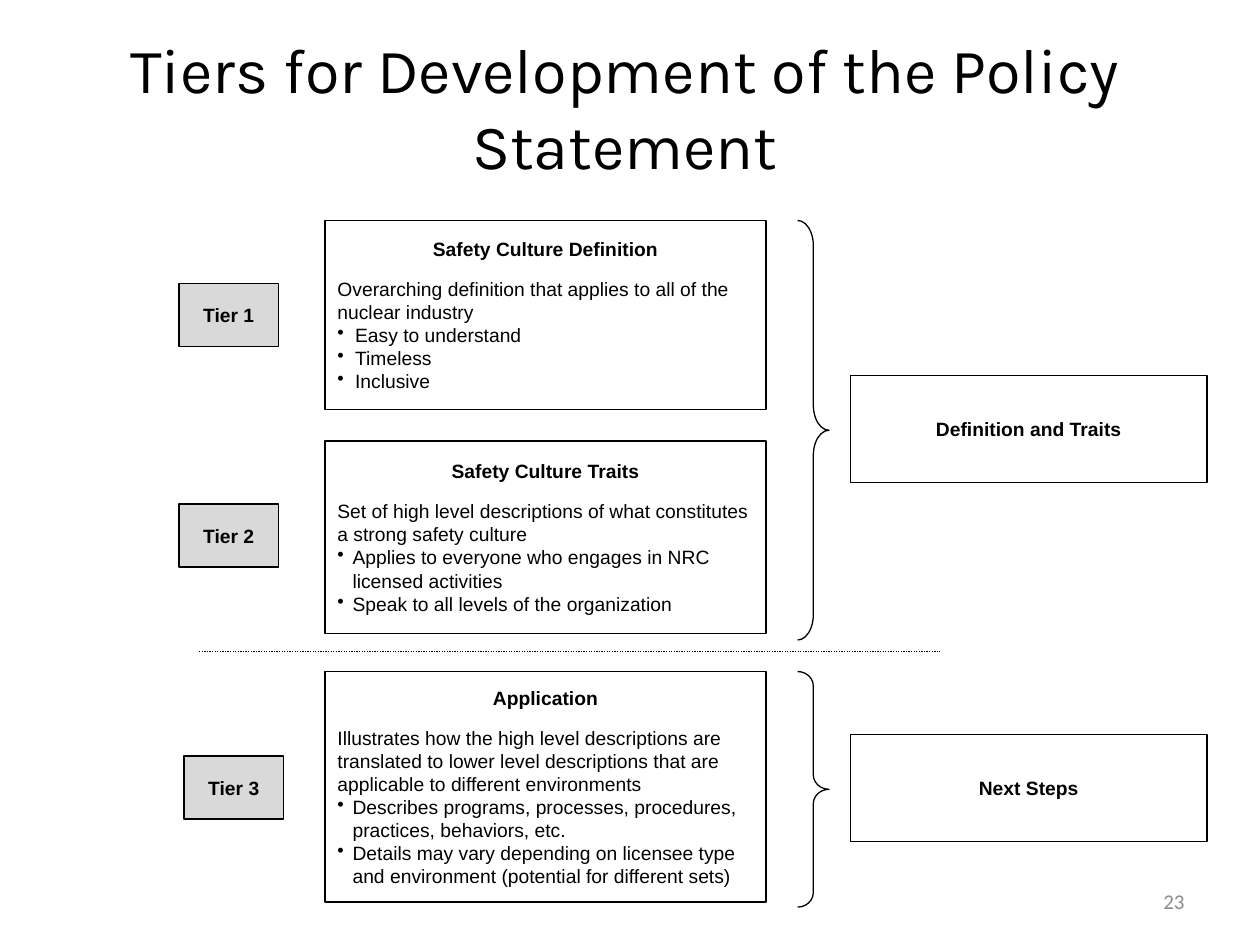
from dataclasses import dataclass
from typing import Optional

from lxml import etree
from pptx import Presentation
from pptx.dml.color import RGBColor
from pptx.enum import dml, shapes, text
from pptx.oxml import ns
from pptx.util import Inches, Pt

HUES = {"ink": "000000", "card": "FFFFFF", "tier": "D9D9D9", "page": "8C8C8C"}
LEFT, MID, RIGHT = text.PP_ALIGN.LEFT, text.PP_ALIGN.CENTER, text.PP_ALIGN.RIGHT


@dataclass
class Box:
    x: float
    y: float
    w: float
    h: float


@dataclass
class Font:
    name: str = "Arial"
    size: float = 11
    hue: str = "ink"
    bold: bool = False


@dataclass
class Card:
    top: float
    high: float
    head: str
    body: str
    points: list[str]
    indent: float = 0.12


@dataclass
class Tag:
    box: Box
    label: str
    fill: str


@dataclass
class Brace:
    top: float
    high: float
    bend: float


BOLD = Font(bold=True)
CARDS = [
    Card(1.75, 1.5, "Safety Culture Definition",
         "Overarching definition that applies to all of the nuclear industry",
         ["Easy to understand", "Timeless", "Inclusive"], 0.14),
    Card(3.5, 1.53, "Safety Culture Traits",
         "Set of high level descriptions of what constitutes a strong safety culture",
         ["Applies to everyone who engages in NRC licensed activities",
          "Speak to all levels of the organization"]),
    Card(5.33, 1.83, "Application",
         "Illustrates how the high level descriptions are translated to lower level "
         "descriptions that are applicable to different environments",
         ["Describes programs, processes, procedures, practices, behaviors, etc.",
          "Details may vary depending on licensee type and environment "
          "(potential for different sets)"]),
]
TAGS = [
    Tag(Box(1.42, 2.25, 0.79, 0.5), "Tier 1", "tier"),
    Tag(Box(1.42, 4, 0.79, 0.5), "Tier 2", "tier"),
    Tag(Box(1.46, 6, 0.79, 0.5), "Tier 3", "tier"),
    Tag(Box(6.75, 2.98, 2.83, 0.85), "Definition and Traits", "card"),
    Tag(Box(6.75, 5.83, 2.83, 0.85), "Next Steps", "card"),
]
BRACES = [Brace(1.75, 3.33, 0.8), Brace(5.33, 1.87, 0.46)]


def tint(hue: str) -> RGBColor:
    return RGBColor.from_string(HUES[hue])


def place(box: Box) -> list[int]:
    return [Inches(n) for n in (box.x, box.y, box.w, box.h)]


def write(para, words: str, font: Font, align=LEFT) -> None:
    para.alignment = align
    run = para.add_run()
    run.text = words
    run.font.name = font.name
    run.font.size = Pt(font.size)
    run.font.bold = font.bold
    run.font.color.rgb = tint(font.hue)


def bullet(para, indent: float) -> None:
    props = para._p.get_or_add_pPr()
    props.set("marL", str(Inches(indent)))
    props.set("indent", str(-Inches(indent)))
    etree.SubElement(props, ns.qn("a:buChar")).set("char", "•")


def shape(slide, kind, box: Box, fill: Optional[str] = None):
    item = slide.shapes.add_shape(kind, *place(box))
    item.shadow.inherit = False
    item.line.color.rgb = tint("ink")
    item.line.width = Pt(0.75)
    if fill:
        item.fill.solid()
        item.fill.fore_color.rgb = tint(fill)
    else:
        item.fill.background()
    item.text_frame.word_wrap = True
    item.text_frame.vertical_anchor = text.MSO_ANCHOR.MIDDLE
    return item


def label(slide, box: Box, words: str, font: Font, align) -> None:
    frame = slide.shapes.add_textbox(*place(box)).text_frame
    frame.word_wrap = True
    frame.vertical_anchor = text.MSO_ANCHOR.MIDDLE
    write(frame.paragraphs[0], words, font, align)


def card(slide, data: Card) -> None:
    box = Box(2.58, data.top, 3.5, data.high)
    frame = shape(slide, shapes.MSO_SHAPE.RECTANGLE, box, "card").text_frame
    head = frame.paragraphs[0]
    write(head, data.head, BOLD, MID)
    head.space_after = Pt(9.5)
    write(frame.add_paragraph(), data.body, Font())
    for point in data.points:
        para = frame.add_paragraph()
        bullet(para, data.indent)
        write(para, point, Font())


def tag(slide, data: Tag) -> None:
    item = shape(slide, shapes.MSO_SHAPE.RECTANGLE, data.box, data.fill)
    write(item.text_frame.paragraphs[0], data.label, BOLD, MID)


def brace(slide, data: Brace) -> None:
    box = Box(6.33, data.top, 0.25, data.high)
    item = shape(slide, shapes.MSO_SHAPE.RIGHT_BRACE, box)
    item.adjustments[0] = data.bend
    item.adjustments[1] = 0.5


def divide(slide) -> None:
    line = slide.shapes.add_connector(
        shapes.MSO_CONNECTOR.STRAIGHT,
        Inches(1.58), Inches(5.17), Inches(7.46), Inches(5.17))
    line.line.color.rgb = tint("ink")
    line.line.width = Pt(0.75)
    line.line.dash_style = dml.MSO_LINE.ROUND_DOT
    etree.SubElement(line._element.spPr, ns.qn("a:effectLst"))


def main() -> None:
    deck = Presentation()
    deck.slide_width, deck.slide_height = Inches(10), Inches(7.5)
    slide = deck.slides.add_slide(deck.slide_layouts[6])
    label(slide, Box(0.29, 0.47, 9.34, 0.75),
          "Tiers for Development of the Policy Statement", Font("Karla", 36), MID)
    label(slide, Box(7.17, 6.95, 2.33, 0.4), "23", Font("Calibri", 12, "page"), RIGHT)
    for data in CARDS:
        card(slide, data)
    for data in TAGS:
        tag(slide, data)
    for data in BRACES:
        brace(slide, data)
    divide(slide)
    deck.save("out.pptx")


if __name__ == "__main__":
    main()
